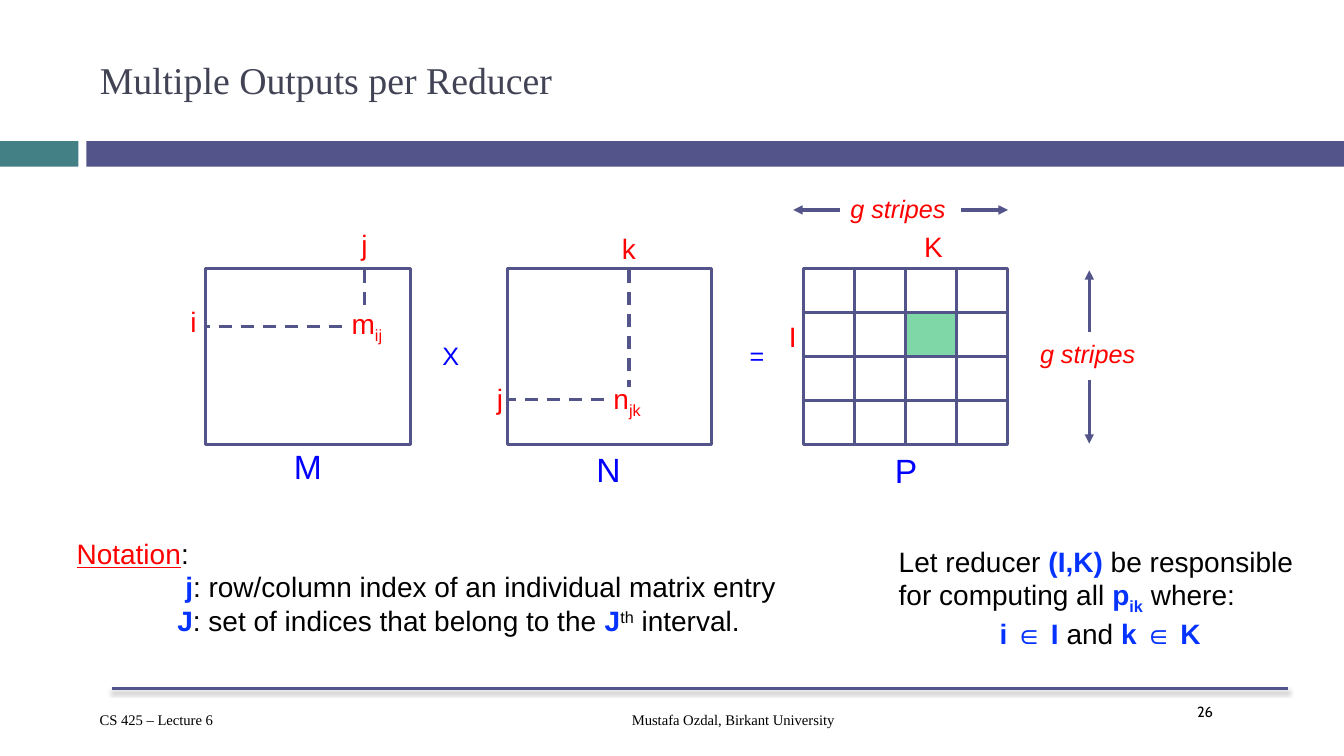
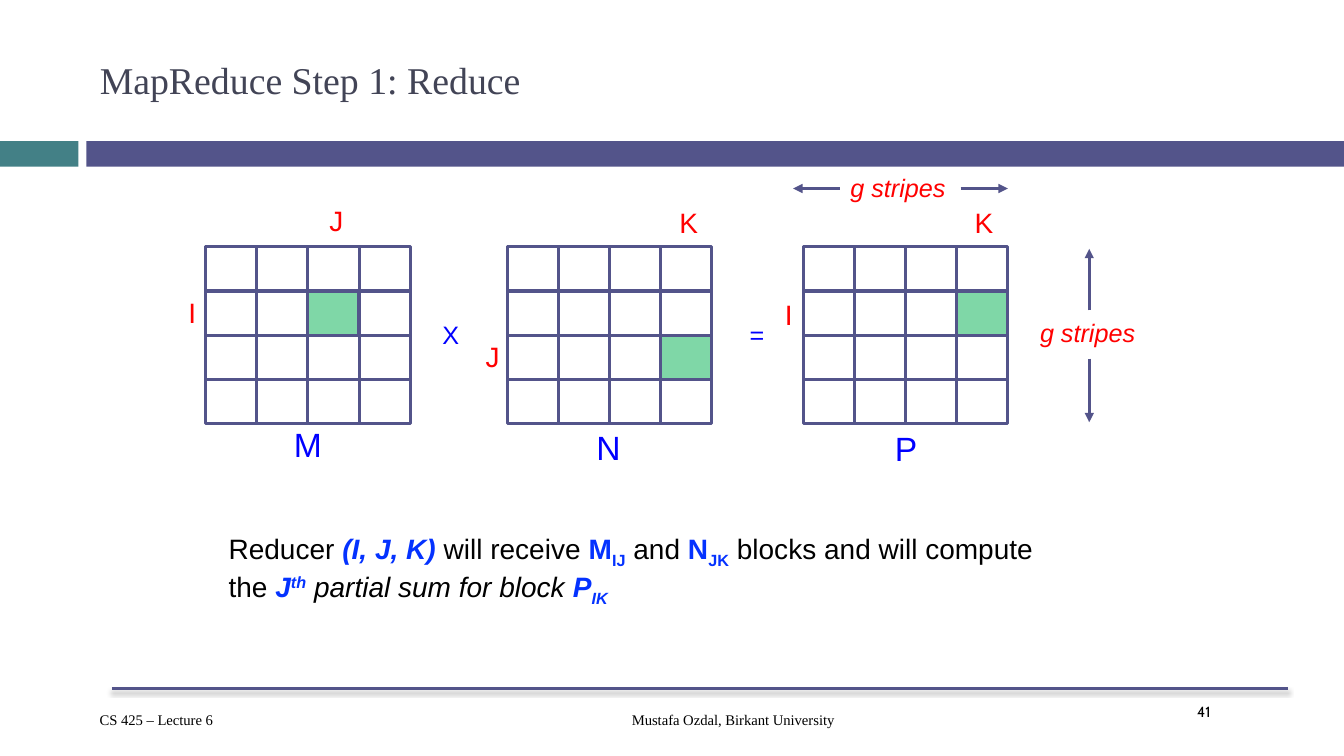
"""Build two slides on block matrix products with reducers."""
from dataclasses import dataclass

from lxml import etree
from pptx import Presentation
from pptx.dml.color import RGBColor
from pptx.enum.dml import MSO_LINE
from pptx.enum.shapes import MSO_CONNECTOR, MSO_SHAPE
from pptx.enum.text import MSO_ANCHOR, MSO_AUTO_SIZE, PP_ALIGN
from pptx.oxml.ns import qn
from pptx.util import Cm, Pt

RECT = MSO_SHAPE.RECTANGLE
LINE = MSO_CONNECTOR.STRAIGHT
DASH = MSO_LINE.DASH
MIDDLE = MSO_ANCHOR.MIDDLE
LEFT, CENTER = PP_ALIGN.LEFT, PP_ALIGN.CENTER
GROW, FIXED = MSO_AUTO_SIZE.SHAPE_TO_FIT_TEXT, MSO_AUTO_SIZE.NONE
TOP_SIDE, LEFT_SIDE, LOW_SIDE, RIGHT_SIDE = range(4)
GRID_W, GRID_H, PARTS = 5.16, 4.45, 4


@dataclass(frozen=True)
class Theme:
    """Hold the colours, fonts and type sizes."""
    teal: str = "438086"
    ink: str = "53548A"
    head: str = "424456"
    black: str = "000000"
    red: str = "FF0000"
    blue: str = "0000FF"
    strong: str = "0432FF"
    green: str = "00B050"
    sans: str = "Arial"
    serif: str = "Times New Roman"
    plain: str = "Cabin"
    title: float = 27
    name: float = 24
    body: float = 20
    sign: float = 18
    foot: float = 10.5


class Deck:
    """Draw elements on the current slide in one style."""

    def __init__(self, theme):
        """Start an empty wide deck."""
        self.theme = theme
        self.prs = Presentation()
        self.prs.slide_width, self.prs.slide_height = Cm(33.87), Cm(19.05)
        self.slide = None

    def start(self, title, number):
        """Add a slide with its title, bands and footer."""
        t = self.theme
        self.slide = self.prs.slides.add_slide(self.prs.slide_layouts[5])
        self.box(0, 3.56, 1.98, 0.64, t.teal)
        self.box(2.18, 3.56, 31.69, 0.64, t.ink)
        self.rule(2.82, 17.35, 32.46)
        self.text([number], 29.92, 17.58, 2.54, 1.27, t.foot, t.black, t.plain)
        self.text(["CS 425 – Lecture 6"], 2.26, 17.78, 6.2, 0.71,
                  t.foot, t.black, t.serif)
        self.text(["Mustafa Ozdal, Birkant University"], 8.74, 17.78, 19.48,
                  0.86, t.foot, t.black, t.serif, align=CENTER)
        head = self.slide.shapes.title
        head.left, head.top = Cm(2.26), Cm(0.64)
        head.width, head.height = Cm(30.2), Cm(2.74)
        frame = head.text_frame
        frame.text = title
        frame.vertical_anchor = MIDDLE
        frame.auto_size = FIXED
        frame.paragraphs[0].alignment = LEFT
        self.style(frame.paragraphs[0].font, t.title, t.head, t.serif)

    def style(self, font, size, color, face):
        """Set size, colour and face of a font."""
        font.size, font.name = Pt(size), face
        font.color.rgb = RGBColor.from_string(color)

    def box(self, x, y, w, h, fill=None, edge=False, alpha=None):
        """Draw a rectangle and return it."""
        shape = self.slide.shapes.add_shape(RECT, Cm(x), Cm(y), Cm(w), Cm(h))
        shape.shadow.inherit = False
        if fill:
            shape.fill.solid()
            shape.fill.fore_color.rgb = RGBColor.from_string(fill)
        else:
            shape.fill.background()
        if alpha:
            tint = shape.fill._xPr.find(qn("a:solidFill"))[0]
            etree.SubElement(tint, qn("a:alpha"), val=str(alpha * 1000))
        if edge:
            shape.line.color.rgb = RGBColor.from_string(self.theme.ink)
            shape.line.width = Pt(2.25)
        else:
            shape.line.fill.background()
        return shape

    def line(self, x1, y1, x2, y2, width=2.25, dash=False, arrow=False):
        """Draw a straight line without shadow and return it."""
        line = self.slide.shapes.add_connector(
            LINE, Cm(x1), Cm(y1), Cm(x2), Cm(y2))
        line.line.color.rgb = RGBColor.from_string(self.theme.ink)
        line.line.width = Pt(width)
        if dash:
            line.line.dash_style = DASH
        if arrow:
            etree.SubElement(line.line._get_or_add_ln(), qn("a:tailEnd"),
                             type="triangle")
        etree.SubElement(line._element.spPr, qn("a:effectLst"))
        return line

    def rule(self, x1, y, x2):
        """Draw the footer rule with its soft shadow."""
        rule = self.line(x1, y, x2, y, width=1.5)
        glow = etree.SubElement(
            rule._element.spPr.find(qn("a:effectLst")), qn("a:outerShdw"),
            blurRad=str(Pt(3)), dist=str(Pt(2.4)), dir="5400000")
        tint = etree.SubElement(glow, qn("a:srgbClr"), val=self.theme.black)
        etree.SubElement(tint, qn("a:alpha"), val="45000")

    def text(self, paras, x, y, w, h, size, color, face=None, wrap=True,
             align=LEFT, indents=(), italic=None):
        """Write paragraphs, each a string or a list of text and mark pairs."""
        shape = self.slide.shapes.add_textbox(Cm(x), Cm(y), Cm(w), Cm(h))
        frame = shape.text_frame
        frame.word_wrap = wrap
        frame.auto_size = FIXED if wrap else GROW
        for i, runs in enumerate(paras):
            para = frame.add_paragraph() if i else frame.paragraphs[0]
            para.alignment = align
            self.style(para.font, size, color, face or self.theme.sans)
            para.font.italic = italic
            if i < len(indents):
                para._p.get_or_add_pPr().set("marL", str(Cm(indents[i])))
            for words, marks in [(runs, "")] if isinstance(runs, str) else runs:
                self.run(para, words, marks)

    def run(self, para, words, marks):
        """Add a run; marks: b strong, i italic, u underline, _ sub, ^ super."""
        run = para.add_run()
        run.text = words
        if "b" in marks:
            run.font.bold = True
            run.font.color.rgb = RGBColor.from_string(self.theme.strong)
        if "i" in marks:
            run.font.italic = True
        if "u" in marks:
            run.font.underline = True
            run.font.color.rgb = RGBColor.from_string(self.theme.red)
        for mark, shift in (("_", "-25000"), ("^", "30000")):
            if mark in marks:
                run._r.get_or_add_rPr().set("baseline", shift)

    def label(self, words, x, y, w, size=None, color=None, italic=None):
        """Write a short label on one line."""
        size = size or self.theme.body
        self.text([words], x, y, w, 0.04 * size + 0.31, size,
                  color or self.theme.red, wrap=False, italic=italic)

    def grid(self, x, y, cell=None):
        """Draw a matrix, cut into blocks if a (row, column) cell is lit."""
        frame = self.box(x, y, GRID_W, GRID_H, edge=True)
        if cell is None:
            return
        dx, dy = GRID_W / PARTS, GRID_H / PARTS
        for i in range(1, PARTS):
            col = self.line(x + i * dx, y, x + i * dx, y + GRID_H)
            row = self.line(x, y + i * dy, x + GRID_W, y + i * dy)
            if 2 * i == PARTS:
                col.begin_connect(frame, TOP_SIDE)
                col.end_connect(frame, LOW_SIDE)
                row.begin_connect(frame, LEFT_SIDE)
                row.end_connect(frame, RIGHT_SIDE)
        r, c = cell
        self.box(x + c * dx, y + r * dy, dx, dy, self.theme.green,
                 edge=True, alpha=50)

    def product(self, top, cells):
        """Draw M times N equals P with the stripe arrows."""
        t = self.theme
        for x, cell in zip((5.18, 12.78, 20.24), cells):
            self.grid(x, top, cell)
        for name, x, y, w in (("M", 7.16, 4.34, 1.22), ("N", 14.78, 4.42, 1.14),
                              ("P", 22.3, 4.45, 1.09)):
            self.label(name, x, top + y, w, t.name, t.blue)
        for sign, x, w in (("X", 10.9, 0.94), ("=", 18.64, 0.89)):
            self.label(sign, x, top + 1.69, w, t.sign, t.blue)
        for x, y in ((21.18, -2.01), (25.96, 1.65)):
            self.label("g stripes", x, top + y, 2.95, t.sign, italic=True)
        for x1, y1, x2, y2 in ((21.16, -1.47, 19.99, -1.47),
                               (24.21, -1.47, 25.4, -1.47),
                               (27.45, 1.6, 27.45, 0.05),
                               (27.45, 2.82, 27.45, 4.42)):
            self.line(x1, top + y1, x2, top + y2, arrow=True)


def outputs(deck):
    """Build the slide on several outputs per reducer."""
    t = deck.theme
    deck.start("Multiple Outputs per Reducer", "26")
    deck.product(6.76, (None, None, (1, 2)))
    for ends in ((9.19, 6.81, 9.19, 7.9), (15.85, 6.81, 15.85, 9.75),
                 (8.61, 8.23, 5.18, 8.23), (15.21, 10.06, 12.78, 10.06)):
        deck.line(*ends, dash=True)
    for words, x, y, w in (
            ([("m", ""), ("ij", "_")], 8.61, 7.59, 1.32),
            ([("n", ""), ("jk", "_")], 15.21, 9.5, 1.24),
            ("i", 4.55, 7.54, 0.69), ("j", 8.86, 5.61, 0.69),
            ("j", 12.27, 9.5, 0.69), ("k", 15.42, 5.72, 0.86),
            ("I", 19.63, 7.92, 0.71), ("K", 23.04, 5.66, 0.99)):
        deck.label(words, x, y, w)
    deck.text([
        [("Notation", "u"), (":", "")],
        [("j", "b"), (": row/column index of an individual matrix entry", "")],
        [("J", "b"), (": set of indices that belong to the ", ""), ("J", "b"),
         ("th", "^"), (" interval.", "")],
    ], 1.68, 13.39, 18.24, 2.82, t.body, t.black, wrap=False,
        indents=(0, 2.74, 2.54))
    deck.text([
        [("Let reducer ", ""), ("(I,K)", "b"),
         (" be responsible for computing all ", ""), ("p", "b"), ("ik", "b_"),
         (" where:", "")],
        [("i ∈ I ", "b"), ("and ", ""), ("k ∈ K", "b")],
    ], 22.4, 13.59, 10.49, 3.45, t.body, t.black, indents=(0, 2.54))


def reduce_step(deck):
    """Build the slide on the reduce step."""
    t = deck.theme
    deck.start("MapReduce Step 1: Reduce", "41")
    deck.product(6.22, ((1, 2), (2, 3), (1, 3)))
    for words, x, y, w in (
            ("I", 4.5, 7.32, 0.71), ("J", 8.05, 5, 0.86),
            ("J", 11.99, 8.43, 0.86), ("K", 16.87, 5.05, 0.99),
            ("I", 19.53, 7.37, 0.71), ("K", 24.31, 5.05, 0.99)):
        deck.label(words, x, y, w)
    deck.text([
        [("Reducer ", ""), ("(I, J, K)", "bi"), (" will receive ", ""),
         ("M", "b"), ("IJ", "b_"), (" and ", ""), ("N", "b"), ("JK", "b_"),
         (" blocks and will compute", "")],
        [("the ", ""), ("J", "bi"), ("th", "bi^"),
         (" partial sum for block ", "i"), ("P", "bi"), ("IK", "bi_")],
    ], 5.51, 13.26, 21.26, 1.96, t.body, t.black, wrap=False)


def main():
    """Build and save the deck."""
    deck = Deck(Theme())
    outputs(deck)
    reduce_step(deck)
    deck.prs.save("out.pptx")


if __name__ == "__main__":
    main()
